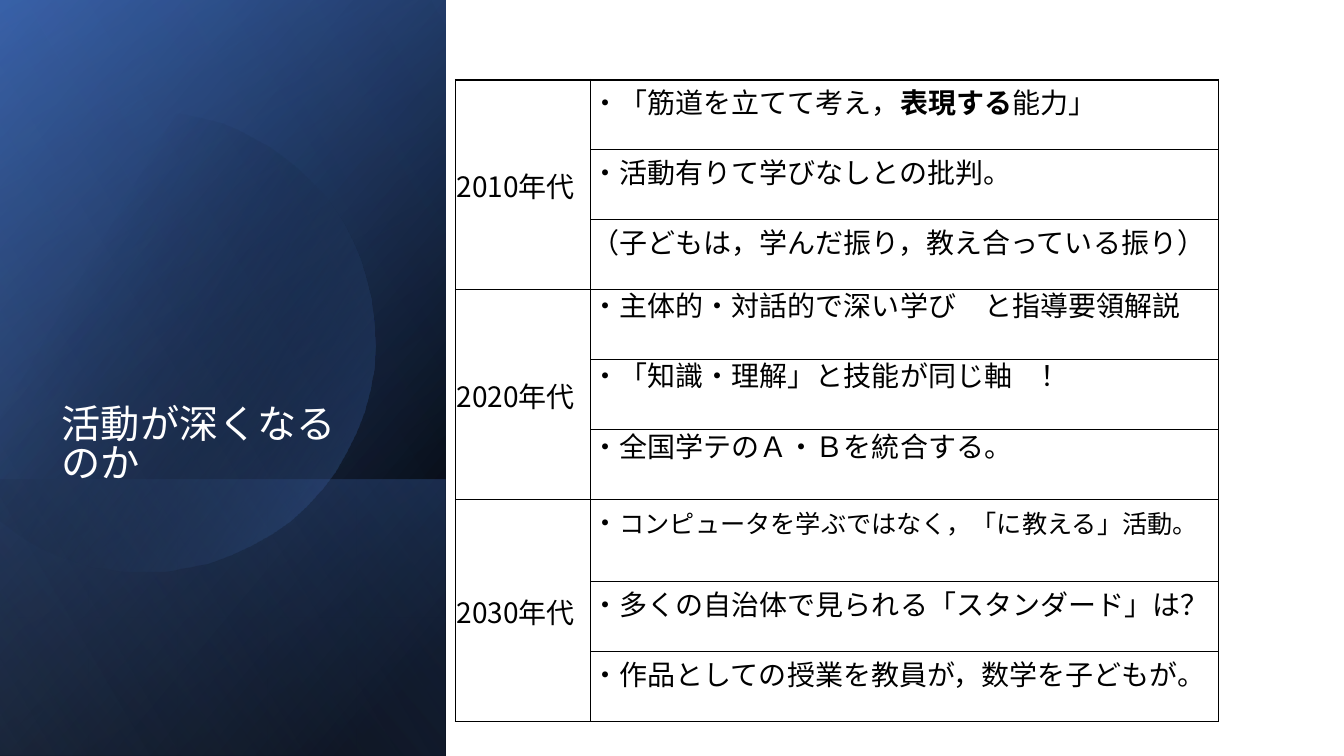
"""Build the slide on how classroom activities deepen, decade by decade."""
from lxml import etree
from pptx import Presentation
from pptx.dml.color import RGBColor
from pptx.enum.shapes import MSO_SHAPE
from pptx.enum.text import MSO_ANCHOR, PP_ALIGN
from pptx.oxml.ns import qn
from pptx.util import Pt

RECTANGLE = MSO_SHAPE.RECTANGLE
MIDDLE, BOTTOM = MSO_ANCHOR.MIDDLE, MSO_ANCHOR.BOTTOM
LEFT = PP_ALIGN.LEFT

BLACK = RGBColor(0x00, 0x00, 0x00)
WHITE = RGBColor(0xFF, 0xFF, 0xFF)
NAVY = RGBColor(0x2F, 0x55, 0x97)
BLUE = RGBColor(0x44, 0x72, 0xC4)
PALE_BLUE = RGBColor(0x8F, 0xAA, 0xDC)

NOTO, ARIAL, CALIBRI = "Noto Sans CJK JP", "Arial", "Calibri"

TITLE = "活動が深くなる\nのか"
DECADES = [
    ("2010年代", [
        [("・「筋道を立てて考え，", NOTO, 20, False), ("表現する", NOTO, 20, True),
         ("能力」", NOTO, 20, False)],
        [("・活動有りて学びなしとの批判。", NOTO, 20, False)],
        [("（子どもは，学んだ振り，教え合っている振り）", NOTO, 20, False)],
    ]),
    ("2020年代", [
        [("・主体的・対話的で深い学び　と指導要領解説", ARIAL, 20, False)],
        [("・「知識・理解」と技能が同じ軸　！", ARIAL, 20, False)],
        [("・", ARIAL, 20, False), ("全国学テのＡ・Ｂを統合する。", CALIBRI, 20, False)],
    ]),
    ("2030年代", [
        [("・", NOTO, 20, False),
         ("コンピュータを学ぶではなく，「に教える」活動。", CALIBRI, 18, False)],
        [("・多くの自治体で見られる「スタンダード」は？", NOTO, 20, False)],
        [("・作品としての授業を教員が，数学を子どもが。", NOTO, 20, False)],
    ]),
]
COLUMN_WIDTHS = (96.5, 448.5)
ROW_HEIGHTS = (50, 50, 50, 50, 50, 50, 58.6, 50, 50)

SIDE_WIDTH, PAGE_WIDTH, PAGE_HEIGHT = 318.5, 960, 540
BASE = ([(8, BLACK, 100), (100, NAVY, 100)], 50)
GLOW = ([(0, BLACK, 0), (99, BLUE, 46)], 30)
FOOT = ([(2, BLUE, 29), (100, BLACK, 30)], 130)
DISC = ([(29, BLACK, 0), (100, BLUE, 43)], 30)
VEIL = ([(0, BLACK, 0), (99, PALE_BLUE, 11)], 120)
FOOT_TOP = 342.7

DISC_START = (107.3, 79.2)
DISC_CURVES = [
    ((177.1, 80.6), (241.2, 127.4), (261.4, 198)),
    ((286.6, 285.8), (236.2, 376.6), (149, 401.8)),
    ((94.3, 417.6), (38.2, 403.9), (-2.2, 370.1)),
    ((-5, 367.5), (-8, 364.8), (-10.8, 362.2)),
    ((-10.8, 283.5), (-10.8, 204.7), (-10.8, 126)),
    ((-7.2, 122.6), (-3.6, 119.3), (0, 115.9)),
    ((16.6, 102.2), (36, 92.2), (57.6, 85.7)),
    ((74.2, 81.4), (90.7, 79.2), DISC_START),
]
CURVE_STEPS = 16


def paint(shape, gradient):
    """Fill a shape with a linear gradient and drop its line and shadow."""
    stops, angle = gradient
    shape.shadow.inherit = False
    shape.line.fill.background()
    shape.fill.background()
    old = shape._element.spPr.find(qn("a:noFill"))
    fill = etree.Element(qn("a:gradFill"), rotWithShape="1")
    stop_list = etree.SubElement(fill, qn("a:gsLst"))
    for position, colour, opacity in stops:
        stop = etree.SubElement(stop_list, qn("a:gs"), pos=str(position * 1000))
        tint = etree.SubElement(stop, qn("a:srgbClr"), val=str(colour))
        if opacity < 100:
            etree.SubElement(tint, qn("a:alpha"), val=str(opacity * 1000))
    etree.SubElement(fill, qn("a:lin"), ang=str(angle * 60000), scaled="0")
    old.getparent().replace(old, fill)


def add_panel(page, top, gradient):
    """Add a turned, mirrored panel reaching from top to the page's foot."""
    length = PAGE_HEIGHT - top
    left = (SIDE_WIDTH - length) / 2
    upper = top + (length - SIDE_WIDTH) / 2
    panel = page.shapes.add_shape(RECTANGLE, Pt(left), Pt(upper), Pt(length), Pt(SIDE_WIDTH))
    panel.rotation = 90
    panel._element.spPr.find(qn("a:xfrm")).set("flipH", "1")
    paint(panel, gradient)


def add_disc(page):
    """Add the cut disc, following its curves in short steps."""
    points, start = [], DISC_START
    for first, second, end in DISC_CURVES:
        for step in range(1, CURVE_STEPS + 1):
            t = step / CURVE_STEPS
            points.append(tuple(
                (1 - t) ** 3 * a + 3 * (1 - t) ** 2 * t * b + 3 * (1 - t) * t ** 2 * c + t ** 3 * d
                for a, b, c, d in zip(start, first, second, end)))
        start = end
    builder = page.shapes.build_freeform(*DISC_START, scale=Pt(1))
    builder.add_line_segments(points)
    paint(builder.convert_to_shape(), DISC)


def style_run(span, font, size, bold, colour):
    """Set a run's font for Latin and East Asian text."""
    span.font.name, span.font.size, span.font.bold = font, Pt(size), bold
    span.font.color.rgb = colour
    east = etree.Element(qn("a:ea"), typeface=font)
    span._r.rPr.find(qn("a:latin")).addnext(east)


def fill_cell(cell, spans, anchor=None):
    """Write styled runs into a table cell."""
    cell.vertical_anchor = anchor
    para = cell.text_frame.paragraphs[0]
    for text, font, size, bold in spans:
        span = para.add_run()
        span.text = text
        style_run(span, font, size, bold, BLACK)


def frame_cell(cell, top_width):
    """Give a cell thin margins, no fill and black borders."""
    cell.margin_left = cell.margin_right = cell.margin_top = Pt(0.75)
    cell.margin_bottom = Pt(0)
    properties = cell._tc.get_or_add_tcPr()
    for side, width in (("lnL", 0.75), ("lnR", 0.75), ("lnT", top_width), ("lnB", 0.75)):
        border = etree.SubElement(properties, qn("a:" + side), w=str(Pt(width)))
        solid = etree.SubElement(border, qn("a:solidFill"))
        etree.SubElement(solid, qn("a:srgbClr"), val=str(BLACK))
    cell.fill.background()


def add_decades(page):
    """Add the table with three rows for each decade."""
    table = page.shapes.add_table(
        len(ROW_HEIGHTS), len(COLUMN_WIDTHS), Pt(325.3), Pt(57),
        Pt(sum(COLUMN_WIDTHS)), Pt(sum(ROW_HEIGHTS))).table
    table.first_row = table.horz_banding = False
    for column, width in zip(table.columns, COLUMN_WIDTHS):
        column.width = Pt(width)
    for index, height in enumerate(ROW_HEIGHTS):
        table.rows[index].height = Pt(height)
        for cell in table.rows[index].cells:
            frame_cell(cell, 0.75 if index else 1.5)
    row = 0
    for decade, entries in DECADES:
        table.cell(row, 0).merge(table.cell(row + len(entries) - 1, 0))
        fill_cell(table.cell(row, 0), [(decade, NOTO, 20, False)], MIDDLE)
        for entry in entries:
            fill_cell(table.cell(row, 1), entry)
            row += 1


def set_title(page):
    """Place the title in front of the side panel."""
    title = page.shapes.title
    title.left, title.top, title.width, title.height = Pt(36.9), Pt(275), Pt(252), Pt(75)
    frame = title.text_frame
    frame.text = TITLE
    frame.word_wrap = True
    frame.vertical_anchor = BOTTOM
    for para in frame.paragraphs:
        para.alignment = LEFT
        para.line_spacing = 0.83
        para.space_before = Pt(0)
        for span in para.runs:
            style_run(span, NOTO, 28, False, WHITE)
    page.shapes._spTree.append(title._element)


def main():
    """Assemble and save the deck."""
    deck = Presentation()
    deck.slide_width, deck.slide_height = Pt(PAGE_WIDTH), Pt(PAGE_HEIGHT)
    page = deck.slides.add_slide(deck.slide_layouts[5])
    backdrop = page.shapes.add_shape(RECTANGLE, 0, 0, Pt(PAGE_WIDTH), Pt(PAGE_HEIGHT))
    backdrop.shadow.inherit = False
    backdrop.fill.solid()
    backdrop.fill.fore_color.rgb = WHITE
    backdrop.line.fill.background()
    for top, gradient in ((0, BASE), (0, GLOW), (FOOT_TOP, FOOT)):
        add_panel(page, top, gradient)
    add_disc(page)
    add_panel(page, 0, VEIL)
    add_decades(page)
    set_title(page)
    deck.save("out.pptx")


if __name__ == "__main__":
    main()
